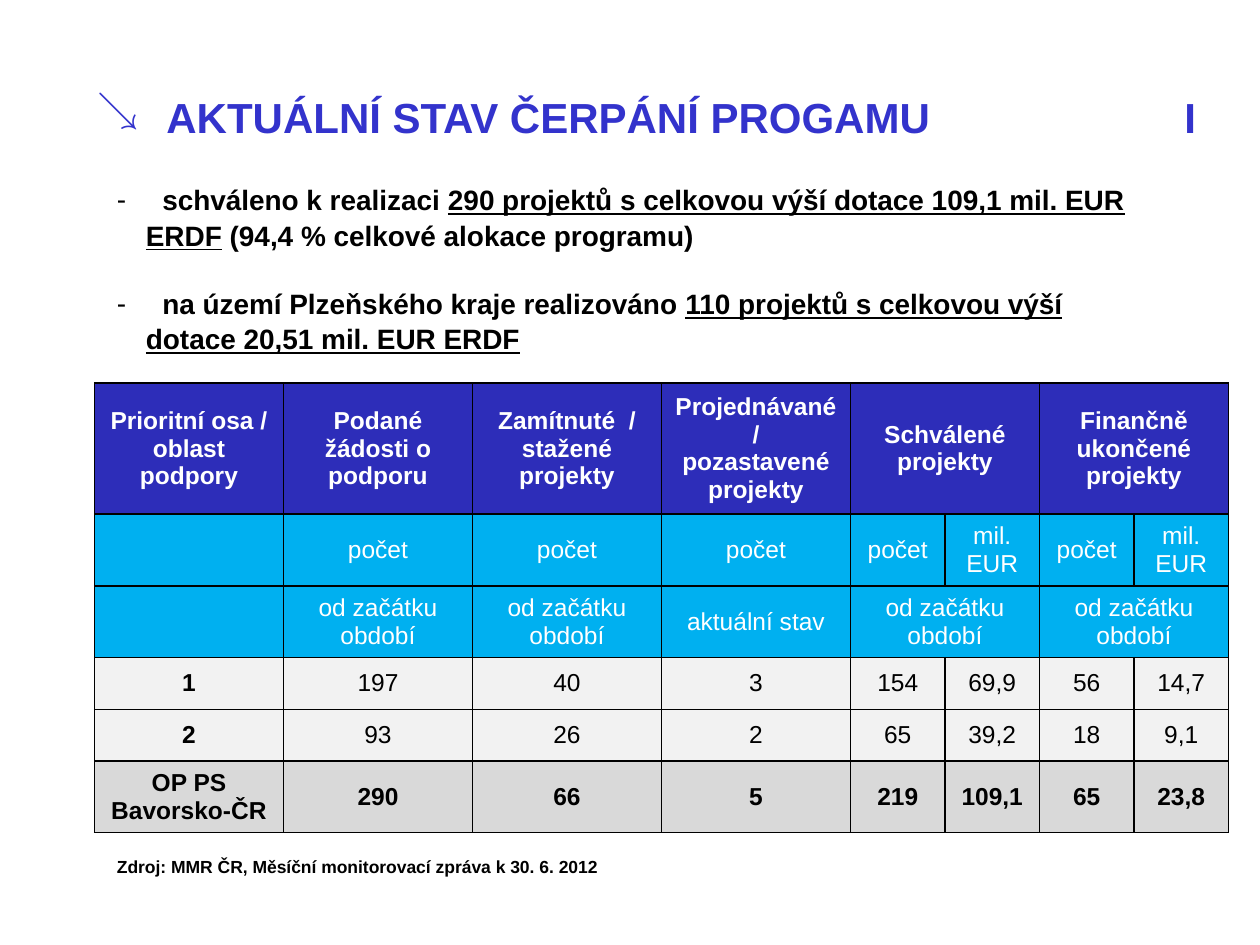
import pptx
import pptx.dml.color
import pptx.enum.text
import pptx.oxml
import pptx.oxml.ns
import pptx.util
from pptx.util import Inches

ALIGN = pptx.enum.text.PP_ALIGN
ANCHOR = pptx.enum.text.MSO_ANCHOR
BLUE, NAVY, SKY = "3333CC", "2D2DB9", "00B0F0"
LIGHT, GREY, BLACK, WHITE = "F2F2F2", "D9D9D9", "000000", "FFFFFF"


def color(value):
    return pptx.dml.color.RGBColor.from_string(value)


def element(markup):
    tag, rest = markup.split(" ", 1)
    return pptx.oxml.parse_xml(f"<{tag} {pptx.oxml.ns.nsdecls('a')} {rest}")


class SlideBuilder:
    font_name = "Arial"

    def __init__(self, deck):
        self.slide = deck.slides.add_slide(deck.slide_layouts[5])

    def span(self, para, text, size, ink=BLACK, bold=False, underline=False):
        span = para.add_run()
        span.text = text
        font = span.font
        font.name, font.size = self.font_name, pptx.util.Pt(size)
        font.bold, font.underline = bold, underline
        font.color.rgb = color(ink)

    def tab(self, para, position):
        para._p.get_or_add_pPr().append(element(
            f'a:tabLst ><a:tab pos="{Inches(position)}" algn="l"/></a:tabLst>'))

    def place(self, box, left, top, width, height, anchor=ANCHOR.TOP):
        box.left, box.top = Inches(left), Inches(top)
        box.width, box.height = Inches(width), Inches(height)
        frame = box.text_frame
        frame.word_wrap = True
        frame.auto_size = pptx.enum.text.MSO_AUTO_SIZE.NONE
        frame.vertical_anchor = anchor
        return frame

    def title(self, text, number, *bounds):
        para = self.place(self.slide.shapes.title, *bounds).paragraphs[0]
        para.alignment = ALIGN.LEFT
        self.tab(para, 8.08)
        self.span(para, f"{text}\t{number}", 24, BLUE, True)

    def text(self, text, size, *bounds, ink=BLACK, bold=False,
             align=ALIGN.LEFT, anchor=ANCHOR.TOP):
        box = self.slide.shapes.add_textbox(0, 0, 0, 0)
        para = self.place(box, *bounds, anchor=anchor).paragraphs[0]
        para.alignment = align
        self.span(para, text, size, ink, bold)

    def bullets(self, items, *bounds):
        box = self.slide.shapes.add_textbox(0, 0, 0, 0)
        frame = self.place(box, *bounds)
        for index, parts in enumerate(items):
            para = frame.add_paragraph() if index else frame.paragraphs[0]
            if index:
                para.space_before = pptx.util.Pt(19)
            para.line_spacing = 1.05
            properties = para._p.get_or_add_pPr()
            properties.set("marL", str(Inches(0.23)))
            properties.set("indent", str(-Inches(0.23)))
            properties.append(element('a:buFont typeface="Arial"/>'))
            properties.append(element('a:buChar char="-"/>'))
            self.tab(para, 0.36)
            for position, (text, underline) in enumerate(parts):
                lead = "" if position else "\t"
                self.span(para, lead + text, 16, bold=True, underline=underline)

    def cell(self, cell, text, fill, ink, bold):
        cell.fill.solid()
        cell.fill.fore_color.rgb = color(fill)
        cell.vertical_anchor = ANCHOR.MIDDLE
        for index, line in enumerate(text.split("\n")):
            frame = cell.text_frame
            para = frame.add_paragraph() if index else frame.paragraphs[0]
            para.alignment = ALIGN.CENTER
            if line:
                self.span(para, line, 14, ink, bold)
        properties = cell._tc.get_or_add_tcPr()
        for index, side in enumerate(("lnL", "lnR", "lnT", "lnB")):
            properties.insert(index, element(
                f'a:{side} w="12700"><a:solidFill><a:srgbClr val="{BLACK}"/>'
                f'</a:solidFill></a:{side}>'))

    def table(self, rows, styles, widths, heights, merged_rows, left, top):
        table = self.slide.shapes.add_table(
            len(rows), len(widths), Inches(left), Inches(top),
            Inches(sum(widths)), Inches(sum(heights))).table
        for column, width in zip(table.columns, widths):
            column.width = Inches(width)
        for row, height in zip(table.rows, heights):
            row.height = Inches(height)
        for r, (texts, (fill, ink, head_bold, bold)) in enumerate(zip(rows, styles)):
            for c, text in enumerate(texts):
                self.cell(table.cell(r, c), text, fill, ink, bold if c else head_bold)
        for r in merged_rows:
            for c in (4, 6):
                table.cell(r, c).merge(table.cell(r, c + 1))


def main():
    deck = pptx.Presentation()
    deck.slide_width, deck.slide_height = Inches(10), Inches(7.5)
    page = SlideBuilder(deck)
    page.bullets([
        [("schváleno k realizaci ", False),
         ("290 projektů s celkovou výší dotace 109,1 mil. EUR ERDF", True),
         (" (94,4 % celkové alokace programu)", False)],
        [("na území Plzeňského kraje realizováno ", False),
         ("110 projektů s celkovou výší dotace 20,51 mil. EUR ERDF", True)],
    ], 0.83, 1.39, 8.47, 1.75)
    page.title("AKTUÁLNÍ STAV ČERPÁNÍ PROGAMU", "I", 1.22, 0.68, 8.43, 0.5)
    page.text("↘", 24, 0.67, 0.6, 0.5, 0.5, ink=BLUE)
    page.text("Zdroj: MMR ČR, Měsíční monitorovací zpráva k 30. 6. 2012", 10,
              0.83, 6.74, 4.8, 0.27, bold=True, align=ALIGN.JUSTIFY,
              anchor=ANCHOR.MIDDLE)
    since = "od začátku období"
    rows = [
        ["Prioritní osa / oblast podpory", "Podané žádosti o podporu",
         "Zamítnuté  / stažené projekty", "Projednávané /\npozastavené projekty",
         "Schválené projekty", "", "Finančně ukončené projekty", ""],
        [""] + ["počet"] * 3 + ["počet", "mil. EUR"] * 2,
        ["", since, since, "aktuální stav", since, "", since, ""],
        ["1", "197", "40", "3", "154", "69,9", "56", "14,7"],
        ["2", "93", "26", "2", "65", "39,2", "18", "9,1"],
        ["OP PS\nBavorsko-ČR", "290", "66", "5", "219", "109,1", "65", "23,8"],
    ]
    styles = ([(NAVY, WHITE, True, True)] + [(SKY, WHITE, False, False)] * 2
              + [(LIGHT, BLACK, True, False)] * 2 + [(GREY, BLACK, True, True)])
    page.table(rows, styles, [1.5] * 4 + [0.75] * 4,
               [1.04, 0.57, 0.57, 0.41, 0.41, 0.57], (0, 2), 0.75, 3.04)
    deck.save("out.pptx")


if __name__ == "__main__":
    main()
